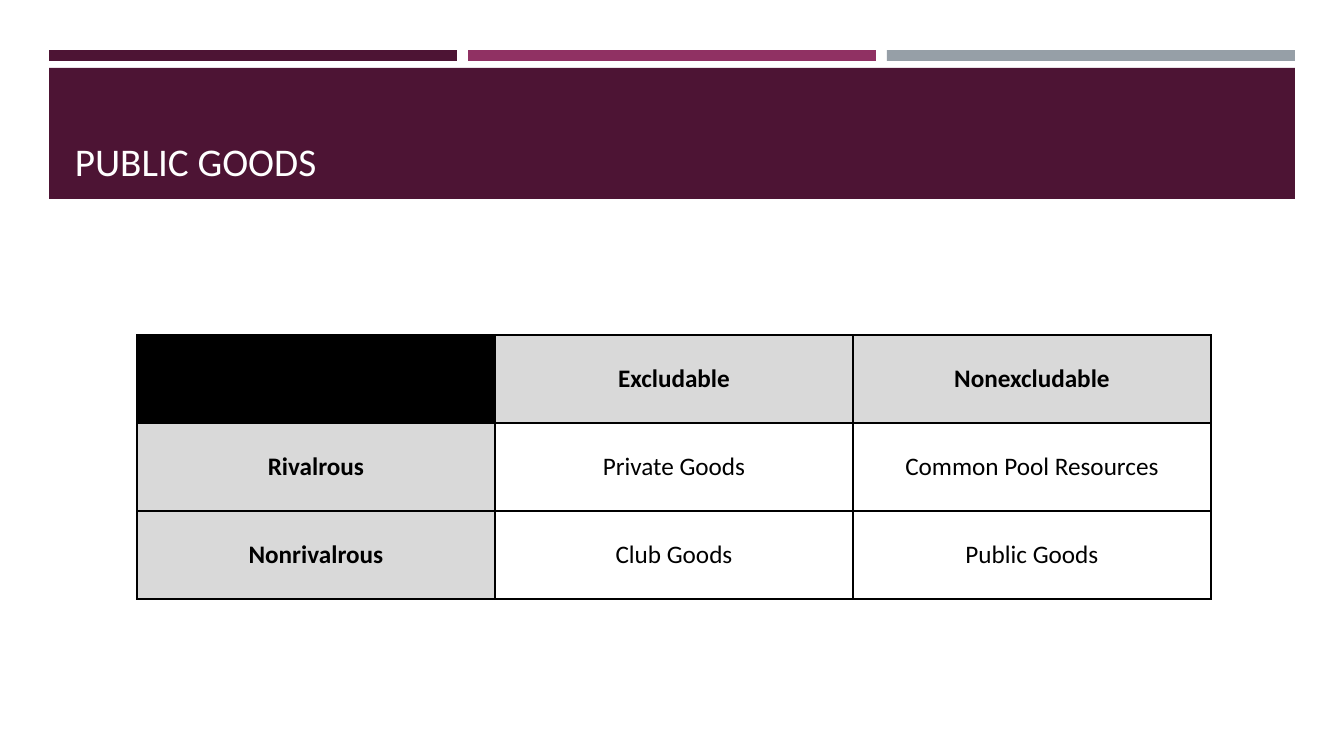
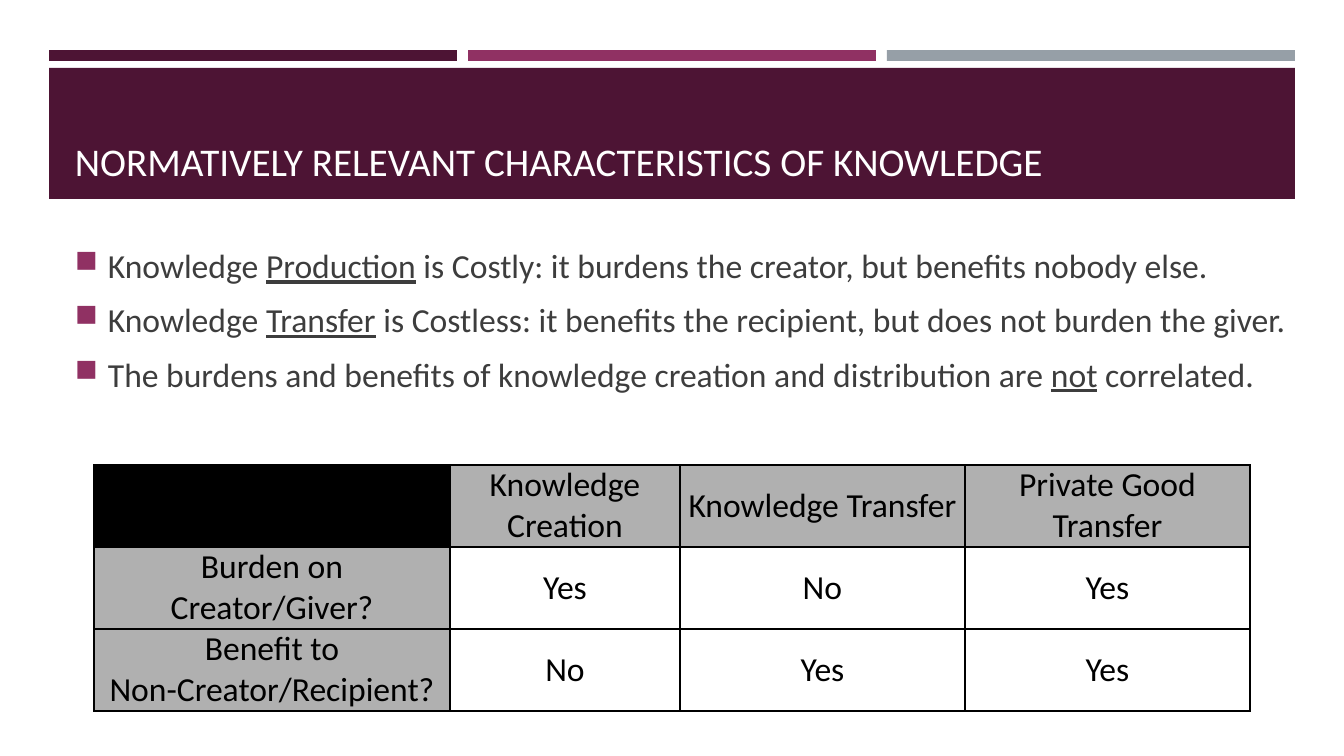
from lxml import etree
from pptx import Presentation
from pptx.dml.color import RGBColor
from pptx.enum.shapes import MSO_SHAPE as Shape
from pptx.enum.text import MSO_ANCHOR as Anchor, PP_ALIGN as Align
from pptx.oxml import parse_xml
from pptx.oxml.ns import nsdecls, qn
from pptx.util import Pt

PX = 914400 / 100.8
FONT = "Calibri"
PLUM = RGBColor(0x4D, 0x14, 0x34)
MAGENTA = RGBColor(0x90, 0x31, 0x63)
SLATE = RGBColor(0x96, 0x9F, 0xA7)
WHITE = RGBColor(0xFF, 0xFF, 0xFF)
BLACK = RGBColor(0x00, 0x00, 0x00)
CHARCOAL = RGBColor(0x3D, 0x3D, 0x3D)
LIGHT_GRAY = RGBColor(0xD9, 0xD9, 0xD9)
MID_GRAY = RGBColor(0xB0, 0xB0, 0xB0)

STRIPES = [PLUM, MAGENTA, SLATE]
STRIPE_WIDTH, STRIPE_STEP = 408, 419

SLIDES = [
    dict(
        title="PUBLIC GOODS",
        points=[],
        grid=dict(
            rows=[
                ["", "Excludable", "Nonexcludable"],
                ["Rivalrous", "Private Goods", "Common Pool Resources"],
                ["Nonrivalrous", "Club Goods", "Public Goods"],
            ],
            left=137, top=335, widths=[358, 358, 358], row_height=88,
            size=18, header_fill=LIGHT_GRAY, header_bold=True, margins=(10, 5),
        ),
    ),
    dict(
        title="NORMATIVELY RELEVANT CHARACTERISTICS OF KNOWLEDGE",
        points=[
            "Knowledge _Production_ is Costly: it burdens the creator, but benefits nobody else.",
            "Knowledge _Transfer_ is Costless: it benefits the recipient, but does not burden the giver.",
            "The burdens and benefits of knowledge creation and distribution are _not_ correlated.",
        ],
        grid=dict(
            rows=[
                ["", "Knowledge Creation", "Knowledge Transfer", "Private Good Transfer"],
                ["Burden on Creator/Giver?", "Yes", "No", "Yes"],
                ["Benefit to\nNon-Creator/Recipient?", "No", "Yes", "Yes"],
            ],
            left=94, top=465, widths=[356, 230, 285, 285], row_height=82,
            size=24, header_fill=MID_GRAY, header_bold=False, margins=(5, 0),
        ),
    ),
]


def px(length):
    return round(length * PX)


def box(*lengths):
    return [px(length) for length in lengths]


def write(frame, lines, size=24, color=BLACK, bold=False, align=Align.LEFT, bulleted=False):
    frame.word_wrap = True
    for number, line in enumerate(lines):
        paragraph = frame.add_paragraph() if number else frame.paragraphs[0]
        paragraph.alignment = align
        for part, words in enumerate(line.split("_")):
            run = paragraph.add_run()
            run.text = words
            font = run.font
            font.name, font.size, font.bold = FONT, Pt(size), bold
            font.underline = part % 2 == 1
            font.color.rgb = color
        if bulleted:
            add_bullet(paragraph)


def add_bullet(paragraph):
    paragraph.space_before, paragraph.space_after = Pt(4), Pt(6)
    props = paragraph._p.get_or_add_pPr()
    props.set("marL", str(px(33)))
    props.set("indent", str(px(-33)))
    bullet_color = etree.SubElement(props, qn("a:buClr"))
    etree.SubElement(bullet_color, qn("a:srgbClr"), val=str(MAGENTA))
    etree.SubElement(props, qn("a:buSzPct"), val="92000")
    etree.SubElement(props, qn("a:buChar"), char="■")


def add_text(slide, place, lines, anchor=Anchor.TOP, **style):
    frame = slide.shapes.add_textbox(*box(*place)).text_frame
    frame.vertical_anchor = anchor
    write(frame, lines, **style)


def add_band(slide, place, color):
    band = slide.shapes.add_shape(Shape.RECTANGLE, *box(*place))
    band.shadow.inherit = False
    band.fill.solid()
    band.fill.fore_color.rgb = color
    band.line.fill.background()


def add_header(slide, title):
    for number, color in enumerate(STRIPES):
        add_band(slide, (49 + number * STRIPE_STEP, 50, STRIPE_WIDTH, 11), color)
    add_band(slide, (49, 68, 1246, 131), PLUM)
    add_text(slide, (65, 78, 1216, 111), [title], anchor=Anchor.BOTTOM, size=28, color=WHITE)


def add_borders(cell):
    props = cell._tc.get_or_add_tcPr()
    for position, side in enumerate(("lnL", "lnR", "lnT", "lnB")):
        props.insert(position, parse_xml(
            f'<a:{side} {nsdecls("a")} w="12700"><a:solidFill>'
            f'<a:srgbClr val="{BLACK}"/></a:solidFill></a:{side}>'))


def add_grid(slide, rows, left, top, widths, row_height, size, header_fill, header_bold, margins):
    place = box(left, top, sum(widths), row_height * len(rows))
    table = slide.shapes.add_table(len(rows), len(widths), *place).table
    table.first_row = table.horz_banding = False
    for column, width in zip(table.columns, widths):
        column.width = px(width)
    for r, texts in enumerate(rows):
        table.rows[r].height = px(row_height)
        for c, text in enumerate(texts):
            cell = table.cell(r, c)
            is_header = r == 0 or c == 0
            if is_header:
                cell.fill.solid()
                cell.fill.fore_color.rgb = header_fill if text else BLACK
            else:
                cell.fill.background()
            add_borders(cell)
            cell.vertical_anchor = Anchor.MIDDLE
            cell.margin_left = cell.margin_right = px(margins[0])
            cell.margin_top = cell.margin_bottom = px(margins[1])
            if text:
                write(cell.text_frame, text.split("\n"), size=size,
                      bold=is_header and header_bold, align=Align.CENTER)


def main():
    deck = Presentation()
    deck.slide_width, deck.slide_height = box(1344, 756)
    for content in SLIDES:
        slide = deck.slides.add_slide(deck.slide_layouts[6])
        add_header(slide, content["title"])
        if content["points"]:
            add_text(slide, (65, 240, 1238, 294), content["points"], color=CHARCOAL, bulleted=True)
        add_grid(slide, **content["grid"])
    deck.save("out.pptx")


if __name__ == "__main__":
    main()
